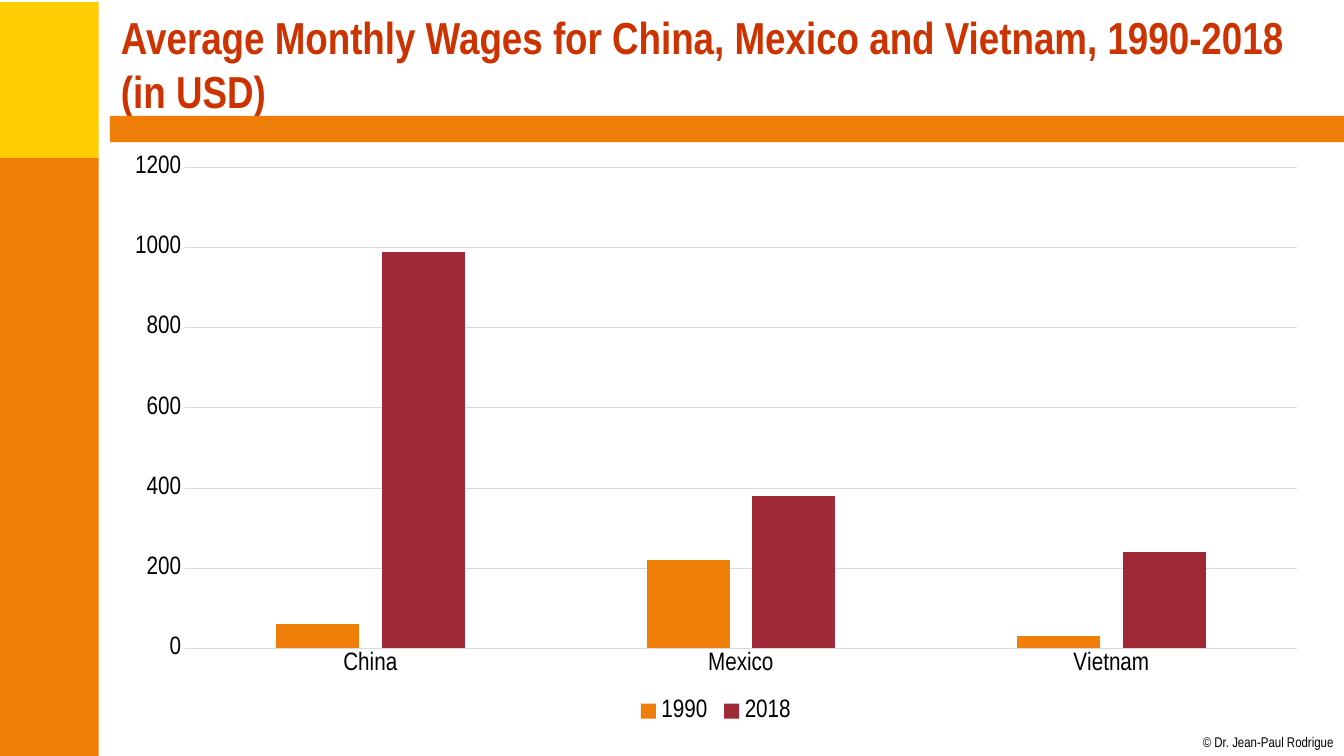
from pptx import Presentation
from pptx.chart.data import CategoryChartData
from pptx.dml.color import RGBColor
from pptx.enum.chart import XL_CHART_TYPE, XL_LEGEND_POSITION, XL_TICK_MARK
from pptx.enum.shapes import MSO_SHAPE
from pptx.enum.text import MSO_ANCHOR, MSO_AUTO_SIZE, PP_ALIGN
from pptx.util import Inches, Pt

RECTANGLE = MSO_SHAPE.RECTANGLE
COLUMNS = XL_CHART_TYPE.COLUMN_CLUSTERED
LEGEND_BOTTOM = XL_LEGEND_POSITION.BOTTOM
NO_TICKS = XL_TICK_MARK.NONE
MIDDLE = MSO_ANCHOR.MIDDLE
NO_AUTOFIT = MSO_AUTO_SIZE.NONE
LEFT = PP_ALIGN.LEFT

FONT = "Arial Narrow"
COLORS = {
    "yellow": "FFCC00",
    "orange": "F07F09",
    "red": "9F2936",
    "title": "CC3300",
    "text": "000000",
    "grid": "D9D9D9",
}


def rgb(name):
    return RGBColor.from_string(COLORS[name])


def set_font(font, size, color="text", bold=False):
    font.name = FONT
    font.size = Pt(size)
    font.bold = bold
    font.color.rgb = rgb(color)


presentation = Presentation()
presentation.slide_width = Inches(13.33)
presentation.slide_height = Inches(7.5)
slide = presentation.slides.add_slide(presentation.slide_layouts[5])

# Side and header bars
bars = [
    (-0.02, 0.02, 1, 1.58, "yellow"),
    (-0.02, 1.57, 1, 5.93, "orange"),
    (1.09, 1.15, 12.24, 0.26, "orange"),
]
for left, top, width, height, color in bars:
    bar = slide.shapes.add_shape(
        RECTANGLE, Inches(left), Inches(top), Inches(width), Inches(height)
    )
    bar.shadow.inherit = False
    bar.fill.solid()
    bar.fill.fore_color.rgb = rgb(color)
    bar.line.fill.background()

# Copyright line
credit = slide.shapes.add_textbox(
    Inches(11.93), Inches(7.28), Inches(1.31), Inches(0.17)
)
credit_frame = credit.text_frame
credit_frame.margin_left = credit_frame.margin_right = 0
credit_frame.margin_top = credit_frame.margin_bottom = 0
credit_frame.word_wrap = False
credit_frame.text = "© Dr. Jean-Paul Rodrigue"
set_font(credit_frame.paragraphs[0].runs[0].font, 10)

# Title
title = slide.shapes.title
title.left, title.top = Inches(1.1), Inches(0.11)
title.width, title.height = Inches(12), Inches(1.04)
title_frame = title.text_frame
title_frame.text = (
    "Average Monthly Wages for China, Mexico and Vietnam, 1990-2018 (in USD)"
)
title_frame.word_wrap = True
title_frame.auto_size = NO_AUTOFIT
title_frame.vertical_anchor = MIDDLE
title_frame.paragraphs[0].alignment = LEFT
set_font(title_frame.paragraphs[0].runs[0].font, 32, "title", bold=True)

# Wage chart
wages = CategoryChartData()
wages.categories = ["China", "Mexico", "Vietnam"]
wages.add_series("1990", [60, 220, 30])
wages.add_series("2018", [990, 380, 240])
chart = slide.shapes.add_chart(
    COLUMNS, Inches(1.1), Inches(1.43), Inches(12), Inches(5.79), wages
).chart
chart.has_title = False
set_font(chart.font, 18)

plot = chart.plots[0]
plot.gap_width = 219
plot.overlap = -27
plot.vary_by_categories = False
for series, color in zip(plot.series, ["orange", "red"]):
    series.format.fill.solid()
    series.format.fill.fore_color.rgb = rgb(color)

category_axis, value_axis = chart.category_axis, chart.value_axis
for axis in (category_axis, value_axis):
    axis.major_tick_mark = NO_TICKS
    axis.minor_tick_mark = NO_TICKS
    set_font(axis.tick_labels.font, 18)
value_axis.minimum_scale = 0
value_axis.maximum_scale = 1200
value_axis.major_unit = 200
value_axis.format.line.fill.background()
for line in (category_axis.format.line, value_axis.major_gridlines.format.line):
    line.color.rgb = rgb("grid")
    line.width = Pt(0.75)

chart.has_legend = True
chart.legend.position = LEGEND_BOTTOM
chart.legend.include_in_layout = False
set_font(chart.legend.font, 18)

presentation.save("out.pptx")
